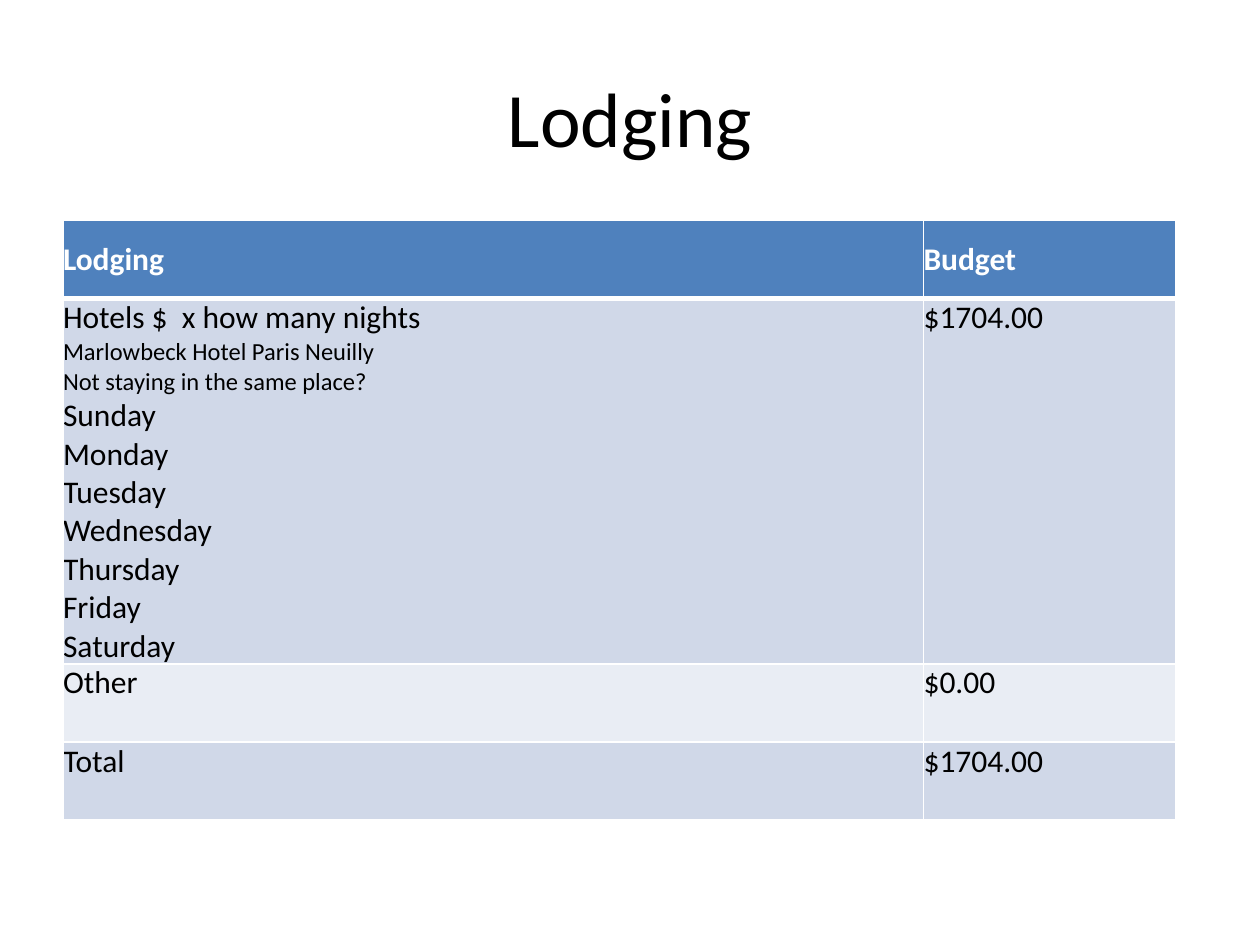
import pptx
import pptx.util
import pptx.dml.color
import pptx.enum.text
import lxml.etree
from dataclasses import dataclass
from pptx.util import Inches


@dataclass(frozen=True)
class Theme:
    font: str = "Calibri"
    black: str = "000000"
    white: str = "FFFFFF"
    header: str = "4F81BD"
    band_dark: str = "D0D8E8"
    band_light: str = "E9EDF4"
    title_size: int = 44
    body_size: int = 18
    note_size: int = 14


theme = Theme()
ANCHOR = pptx.enum.text.MSO_ANCHOR


def style(paragraph, size, color, bold=False):
    for run in paragraph.runs:
        run.font.name = theme.font
        run.font.size = pptx.util.Pt(size)
        run.font.bold = bold
        run.font.color.rgb = pptx.dml.color.RGBColor.from_string(color)


def add_border(cell, side, points):
    ns = "{http://schemas.openxmlformats.org/drawingml/2006/main}"
    line = lxml.etree.SubElement(cell._tc.get_or_add_tcPr(), f"{ns}ln{side}",
                                 w=str(pptx.util.Pt(points)))
    fill = lxml.etree.SubElement(line, f"{ns}solidFill")
    lxml.etree.SubElement(fill, f"{ns}srgbClr", val=theme.white)


presentation = pptx.Presentation()
presentation.slide_width = Inches(10)
presentation.slide_height = Inches(7.5)
slide = presentation.slides.add_slide(presentation.slide_layouts[6])

# Title
title = slide.shapes.add_textbox(Inches(0.5), Inches(0.3), Inches(9), Inches(1.25))
title.text_frame.word_wrap = True
title.text_frame.vertical_anchor = ANCHOR.MIDDLE
title.text_frame.text = "Lodging"
heading = title.text_frame.paragraphs[0]
heading.alignment = pptx.enum.text.PP_ALIGN.CENTER
style(heading, theme.title_size, theme.black)

# Budget rows
hotel_notes = ["Marlowbeck Hotel Paris Neuilly", "Not staying in the same place?"]
days = ["Sunday", "Monday", "Tuesday", "Wednesday", "Thursday", "Friday", "Saturday"]
hotel_lines = ["Hotels $  x how many nights", *hotel_notes, *days]
budget_rows = [
    ("Lodging", "Budget"),
    ("\n".join(hotel_lines), "$1704.00"),
    ("Other", "$0.00"),
    ("Total", "$1704.00"),
]
column_widths = [6.83, 2]
row_heights = [0.62, 2.9, 0.62, 0.62]

# Budget table
budget = slide.shapes.add_table(
    len(budget_rows), len(column_widths), Inches(0.5), Inches(1.75),
    Inches(sum(column_widths)), Inches(sum(row_heights))).table
for column, width in zip(budget.columns, column_widths):
    column.width = Inches(width)
for row, height in zip(budget.rows, row_heights):
    row.height = Inches(height)

for row_index, entries in enumerate(budget_rows):
    is_header = row_index == 0
    band = theme.band_dark if row_index % 2 else theme.band_light
    for column_index, entry in enumerate(entries):
        cell = budget.cell(row_index, column_index)
        cell.margin_left = cell.margin_right = cell.margin_top = cell.margin_bottom = 0
        cell.vertical_anchor = ANCHOR.MIDDLE if is_header else ANCHOR.TOP
        for side in "LRTB":
            meets_header = (is_header and side == "B") or (row_index == 1 and side == "T")
            add_border(cell, side, 3 if meets_header else 1)
        cell.fill.solid()
        cell.fill.fore_color.rgb = pptx.dml.color.RGBColor.from_string(
            theme.header if is_header else band)
        cell.text_frame.text = entry
        for paragraph in cell.text_frame.paragraphs:
            size = theme.note_size if paragraph.text in hotel_notes else theme.body_size
            style(paragraph, size, theme.white if is_header else theme.black, is_header)

presentation.save("out.pptx")
